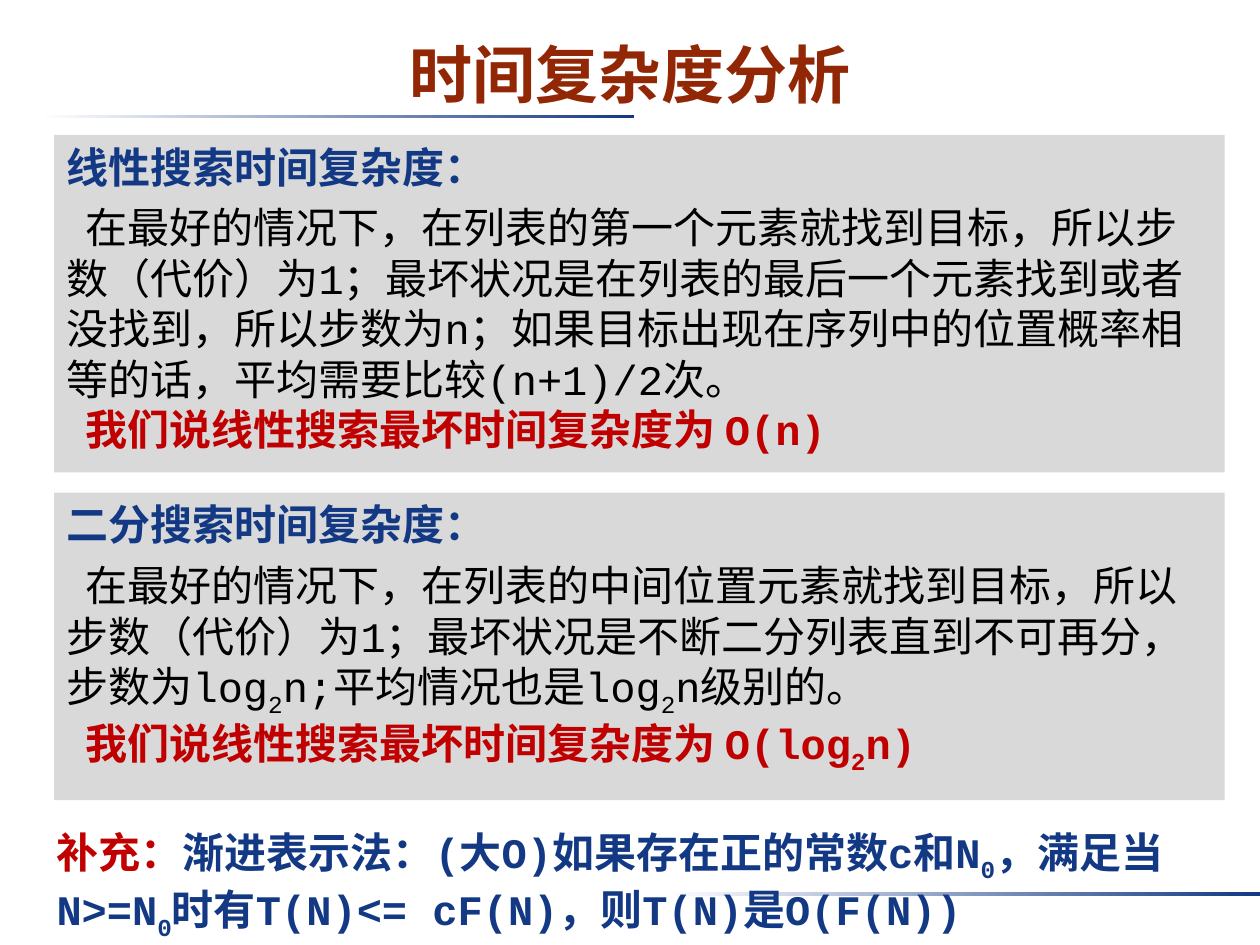
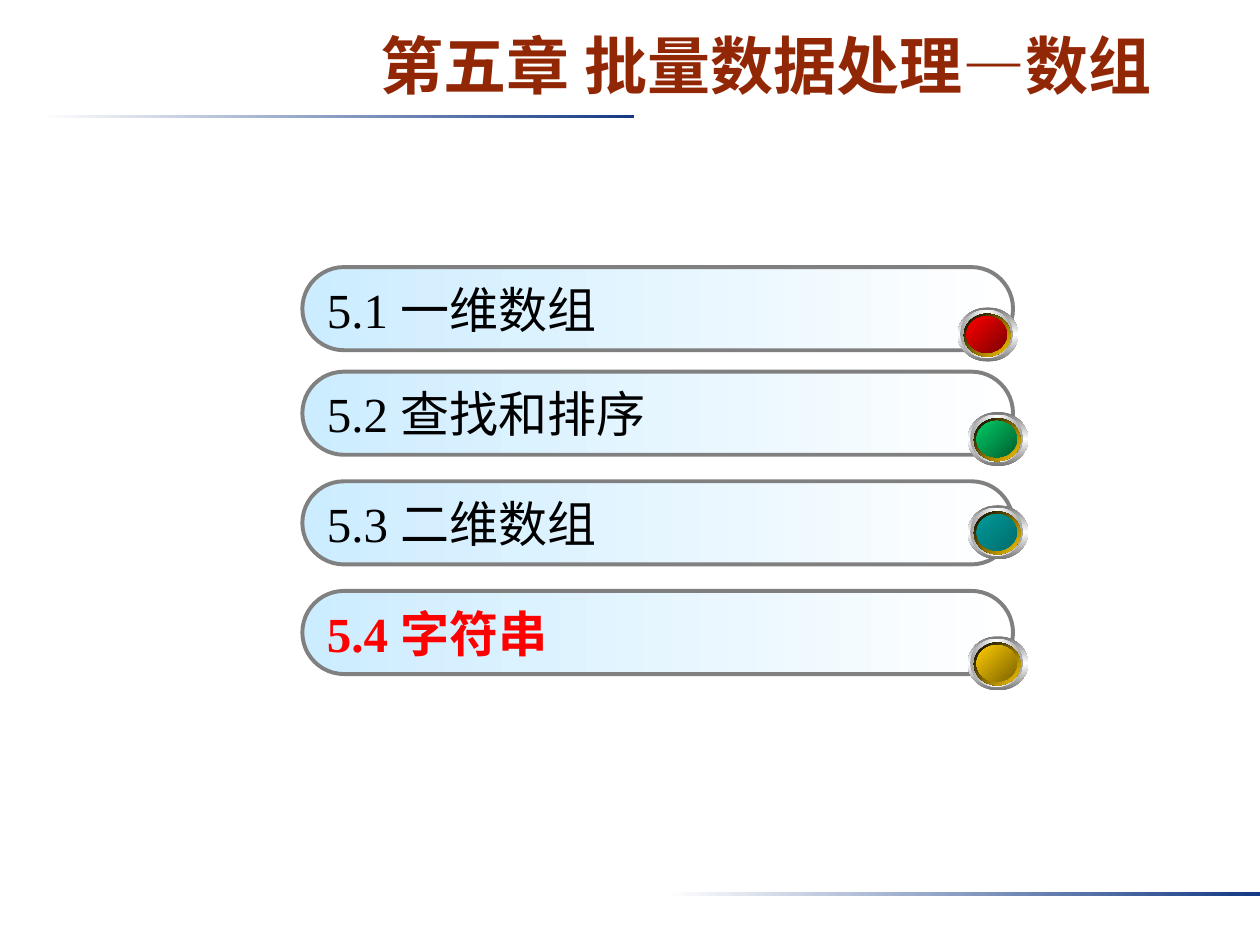
from pptx import Presentation
from pptx import util as u
from pptx.dml.color import RGBColor
from pptx.enum import shapes, text
from pptx.oxml.ns import qn
from lxml import etree

COLORS = {
    "white": "FFFFFF", "black": "000000", "navy": "133984", "title": "922706",
    "panel": "D9D9D9", "crimson": "C00000", "red": "FF0000", "sky": "CCECFF",
    "gray": "808080", "rim": "767676", "ring": "A2A2A2", "gold": "FFCC00",
    "dark red": "7C0000", "green": "00CC66", "dark green": "005E2F",
    "teal": "009999", "dark teal": "006D6D", "dark gold": "7C6300",
}
TITLE_FORMAT = {"name": "Arial", "size": u.Pt(36), "bold": True}
BODY_FORMAT = {"name": "Courier New", "size": u.Pt(24)}
BAR_FORMAT = {"name": "Times New Roman", "size": u.Pt(28)}


def fill_gradient(shape, color_names, angle=0):
    """Spread the colours evenly along a clockwise angle; remove line and shadow."""
    shape.shadow.inherit = False
    shape.line.fill.background()
    shape.fill.gradient()
    shape.fill.gradient_angle = -angle % 360
    stops = shape.element.spPr.find(qn("a:gradFill")).find(qn("a:gsLst"))
    for stop in list(stops):
        stops.remove(stop)
    for index, name in enumerate(color_names):
        position = 100000 * index // (len(color_names) - 1)
        stop = etree.SubElement(stops, qn("a:gs"), pos=str(position))
        etree.SubElement(stop, qn("a:srgbClr"), val=COLORS[name])


def write(paragraph, marked_text, color, font_format, bold=False):
    """Add runs; parts between underscores become subscripts."""
    for index, part in enumerate(marked_text.split("_")):
        run = paragraph.add_run()
        run.text = part
        for name, value in {**font_format, "bold": bold}.items():
            setattr(run.font, name, value)
        run.font.color.rgb = RGBColor.from_string(COLORS[color])
        if index % 2:
            run._r.get_or_add_rPr().set("baseline", "-25000")


presentation = Presentation()
presentation.slide_width = u.Inches(10)
presentation.slide_height = u.Inches(7.5)
master = presentation.slide_master

# Slides and titles
slides = []
for title_text, left, top, width in [
    ("时间复杂度分析", 0, 0.2, 10),
    ("第五章 批量数据处理—数组", 2.4, 0.13, 7.36),
]:
    slide = presentation.slides.add_slide(presentation.slide_layouts[5])
    title = slide.shapes.title
    title.left, title.top = u.Inches(left), u.Inches(top)
    title.width, title.height = u.Inches(width), u.Inches(0.75)
    frame = title.text_frame
    frame.auto_size = text.MSO_AUTO_SIZE.NONE
    frame.vertical_anchor = text.MSO_ANCHOR.MIDDLE
    frame.margin_top = u.Inches(0.06)
    frame.paragraphs[0].alignment = text.PP_ALIGN.CENTER
    write(frame.paragraphs[0], title_text, "title", TITLE_FORMAT, True)
    slides.append(slide)
analysis_slide, chapter_slide = slides

# Fading bands, moved to the master that both slides share
for index, (left, top) in enumerate([(0.31, 0.91), (5.28, 7.08)]):
    band = analysis_slide.shapes.add_shape(
        shapes.MSO_SHAPE.RECTANGLE, u.Inches(left), u.Inches(top),
        u.Inches(4.72), u.Inches(0.03))
    fill_gradient(band, ["white", "navy"])
    band.element.nvSpPr.cNvPr.set("id", str(100 + index))
    master.shapes.element.append(band.element)

# Complexity panels
panels = [
    (1.07, 2.68, "线性搜索时间复杂度：",
     "在最好的情况下，在列表的第一个元素就找到目标，所以步数（代价）为1；"
     "最坏状况是在列表的最后一个元素找到或者没找到，所以步数为n；"
     "如果目标出现在序列中的位置概率相等的话，平均需要比较(n+1)/2次。",
     "我们说线性搜索最坏时间复杂度为 O(n)"),
    (3.91, 2.44, "二分搜索时间复杂度：",
     "在最好的情况下，在列表的中间位置元素就找到目标，所以步数（代价）为1；"
     "最坏状况是不断二分列表直到不可再分，步数为log_2_n;平均情况也是log_2_n级别的。",
     "我们说线性搜索最坏时间复杂度为 O(log_2_n)"),
]
for top, height, heading, explanation, conclusion in panels:
    panel = analysis_slide.shapes.add_shape(
        shapes.MSO_SHAPE.RECTANGLE, u.Inches(0.43), u.Inches(top),
        u.Inches(9.29), u.Inches(height))
    panel.shadow.inherit = False
    panel.fill.solid()
    panel.fill.fore_color.rgb = RGBColor.from_string(COLORS["panel"])
    panel.line.fill.background()
    frame = panel.text_frame
    frame.word_wrap = True
    frame.vertical_anchor = text.MSO_ANCHOR.TOP
    frame.paragraphs[0].space_after = u.Pt(6)
    for index, (words, color, bold) in enumerate([
        (heading, "navy", True), (explanation, "black", False),
        (conclusion, "crimson", True),
    ]):
        paragraph = frame.add_paragraph() if index else frame.paragraphs[0]
        paragraph.alignment = text.PP_ALIGN.LEFT
        if index:
            paragraph._p.get_or_add_pPr().set("indent", str(u.Inches(0.15)))
        write(paragraph, words, color, BODY_FORMAT, bold)

# Big-O definition
definition = analysis_slide.shapes.add_textbox(
    u.Inches(0.35), u.Inches(6.51), u.Inches(9.45), u.Inches(0.91))
definition.text_frame.word_wrap = True
definition.text_frame.auto_size = text.MSO_AUTO_SIZE.SHAPE_TO_FIT_TEXT
paragraph = definition.text_frame.paragraphs[0]
write(paragraph, "补充：", "crimson", BODY_FORMAT, True)
write(paragraph, "渐进表示法：(大O)如果存在正的常数c和N_0_，满足当N>=N_0_时有"
      "T(N)<= cF(N)，则T(N)是O(F(N))", "navy", BODY_FORMAT, True)

# Chapter contents: a bar with a layered button for each section
sections = [
    ("5.1 一维数组", 2.12, 7.6, 2.44, ["red", "dark red"]),
    ("5.2 查找和排序", 2.95, 7.68, 3.27, ["green", "dark green"]),
    ("5.3 二维数组", 3.82, 7.68, 4.01, ["teal", "dark teal"]),
    ("5.4 字符串", 4.69, 7.68, 5.05, ["gold", "dark gold"]),
]
current_section = "5.4 字符串"
for label, bar_top, button_left, button_top, button_colors in sections:
    group = chapter_slide.shapes.add_group_shape()
    bar = group.shapes.add_shape(
        shapes.MSO_SHAPE.ROUNDED_RECTANGLE, u.Inches(2.4), u.Inches(bar_top),
        u.Inches(5.64), u.Inches(0.66))
    bar.adjustments[0] = 0.5
    fill_gradient(bar, ["sky", "white"])
    bar.line.color.rgb = RGBColor.from_string(COLORS["gray"])
    bar.line.width = u.Pt(2.25)
    bar.text_frame.vertical_anchor = text.MSO_ANCHOR.MIDDLE
    paragraph = bar.text_frame.paragraphs[0]
    paragraph.alignment = text.PP_ALIGN.LEFT
    is_current = label == current_section
    write(paragraph, label, "red" if is_current else "black", BAR_FORMAT, is_current)

    for inset, width, height, color_names, angle in [
        (0, 0.48, 0.43, ["rim", "white", "rim"], 90),
        (0.02, 0.42, 0.38, ["ring", "white", "ring"], 0),
        (0.05, 0.37, 0.34, ["black", "gold"], 45),
        (0.07, 0.32, 0.29, button_colors, 45),
    ]:
        layer = group.shapes.add_shape(
            shapes.MSO_SHAPE.OVAL, u.Inches(button_left + inset),
            u.Inches(button_top + inset), u.Inches(width), u.Inches(height))
        fill_gradient(layer, color_names, angle)

presentation.save("out.pptx")
